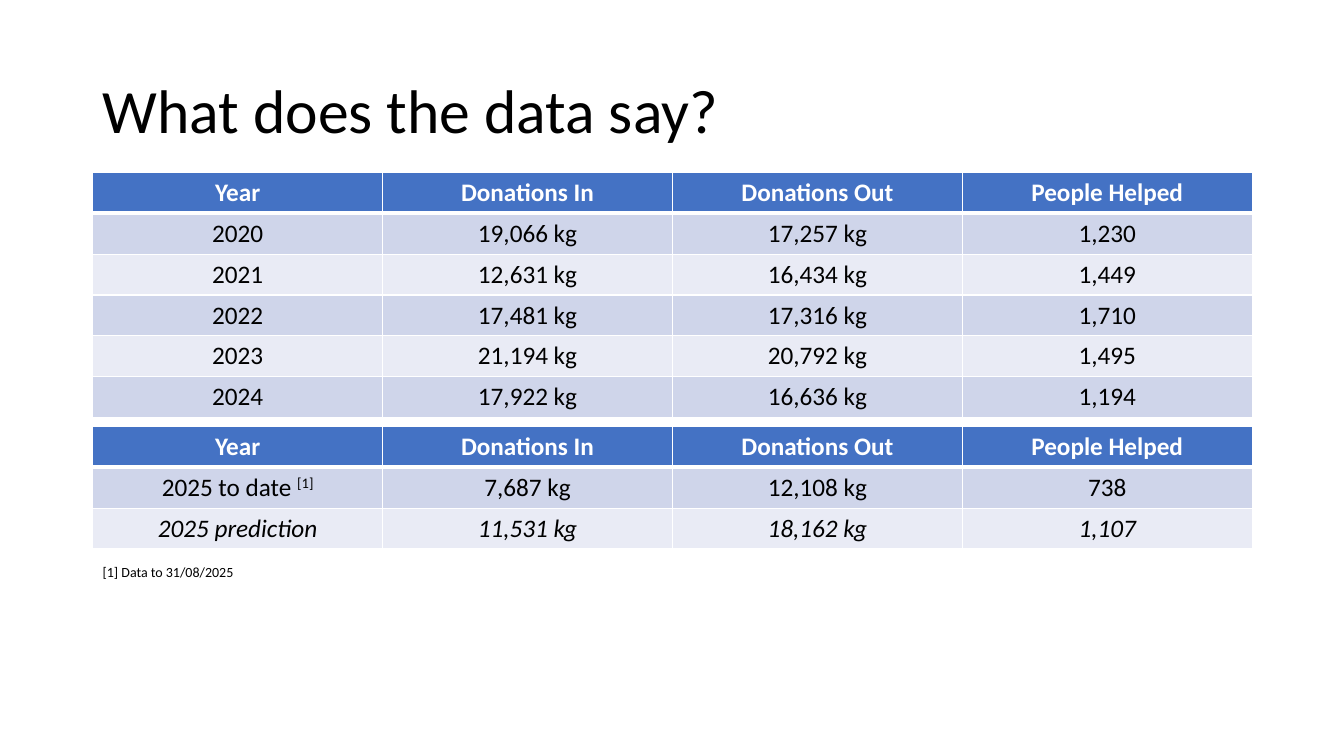
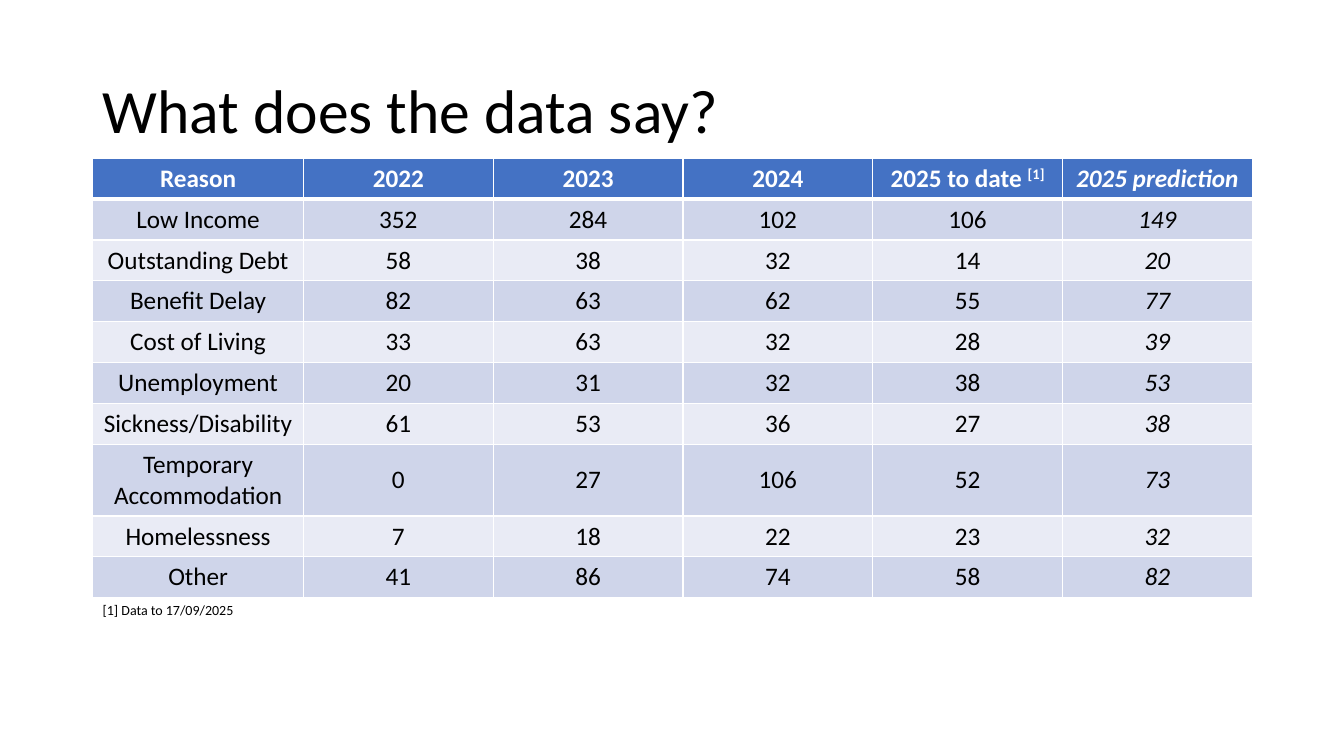
from lxml.etree import SubElement
from pptx import Presentation
from pptx.dml.color import RGBColor
from pptx.enum.text import MSO_ANCHOR as Anchor, MSO_AUTO_SIZE as AutoSize, PP_ALIGN as Align
from pptx.oxml.ns import qn
from pptx.util import Inches, Pt

LEFT, WIDTH = Inches(0.92), Inches(11.5)
ROW_HEIGHT = Inches(4.05) // 10
TITLE = "What does the data say?"
MARKER = "[1]"
PREDICTION = "2025 prediction"
TO_DATE = f"2025 to date {MARKER}"

DONATION_HEADINGS = ("Year", "Donations In", "Donations Out", "People Helped")
PAST_YEARS = [
    DONATION_HEADINGS,
    ("2020", "19,066 kg", "17,257 kg", "1,230"),
    ("2021", "12,631 kg", "16,434 kg", "1,449"),
    ("2022", "17,481 kg", "17,316 kg", "1,710"),
    ("2023", "21,194 kg", "20,792 kg", "1,495"),
    ("2024", "17,922 kg", "16,636 kg", "1,194"),
]
CURRENT_YEAR = [
    DONATION_HEADINGS,
    (TO_DATE, "7,687 kg", "12,108 kg", "738"),
    (PREDICTION, "11,531 kg", "18,162 kg", "1,107"),
]
REASONS = [
    ("Reason", "2022", "2023", "2024", TO_DATE, PREDICTION),
    ("Low Income", "352", "284", "102", "106", "149"),
    ("Outstanding Debt", "58", "38", "32", "14", "20"),
    ("Benefit Delay", "82", "63", "62", "55", "77"),
    ("Cost of Living", "33", "63", "32", "28", "39"),
    ("Unemployment", "20", "31", "32", "38", "53"),
    ("Sickness/Disability", "61", "53", "36", "27", "38"),
    ("Temporary Accommodation", "0", "27", "106", "52", "73"),
    ("Homelessness", "7", "18", "22", "23", "32"),
    ("Other", "41", "86", "74", "58", "82"),
]


def color(value):
    """Turn a hex string into a colour."""
    return RGBColor.from_string(value)


class DataDeck:
    """Hold the shared style and the slide being built."""

    FONT = "Calibri"
    INK, PAPER, HEADER = "000000", "FFFFFF", "4472C4"
    BANDS = ("E9EBF5", "CFD5EA")

    def __init__(self):
        """Start a widescreen deck."""
        self.deck = Presentation()
        self.deck.slide_width, self.deck.slide_height = Inches(13.33), Inches(7.5)
        self.page = None

    def style(self, para, size, ink=INK, bold=False, italic=False):
        """Format every run of a paragraph."""
        for span in para.runs:
            font = span.font
            font.name, font.size = self.FONT, Pt(size)
            font.bold, font.italic = bold, italic
            font.color.rgb = color(ink)

    def add_page(self, title):
        """Add a slide with its title."""
        self.page = self.deck.slides.add_slide(self.deck.slide_layouts[5])
        box = self.page.shapes.title
        box.left, box.top, box.width, box.height = LEFT, Inches(0.4), WIDTH, Inches(1.45)
        frame = box.text_frame
        frame.text = title
        frame.auto_size = AutoSize.NONE
        frame.vertical_anchor = Anchor.MIDDLE
        para = frame.paragraphs[0]
        para.alignment, para.line_spacing = Align.LEFT, 0.9
        self.style(para, 44)

    def add_borders(self, cell, top, bottom):
        """Rule a cell with the given top and bottom weights in points."""
        properties = cell._tc.get_or_add_tcPr()
        for side, weight in (("L", 1), ("R", 1), ("T", top), ("B", bottom)):
            line = SubElement(properties, qn(f"a:ln{side}"), w=str(Pt(weight)))
            fill = SubElement(line, qn("a:solidFill"))
            SubElement(fill, qn("a:srgbClr"), val=self.PAPER)

    def fill_cell(self, cell, text, row, italic):
        """Write and format one table cell."""
        is_header = row == 0
        self.add_borders(cell, 3 if row == 1 else 1, 3 if is_header else 1)
        cell.fill.solid()
        cell.fill.fore_color.rgb = color(self.HEADER if is_header else self.BANDS[row % 2])
        cell.vertical_anchor = Anchor.MIDDLE
        label, marker, _ = text.partition(MARKER)
        para = cell.text_frame.paragraphs[0]
        para.text = label
        para.alignment = Align.CENTER
        if marker:
            span = para.add_run()
            span.text = marker
            span._r.get_or_add_rPr().set("baseline", "30000")
        self.style(para, 18, self.PAPER if is_header else self.INK, is_header, italic)

    def add_table(self, top, rows, first_width=None):
        """Add a banded table with predictions in italics."""
        count = len(rows[0])
        frame = self.page.shapes.add_table(
            len(rows), count, LEFT, Inches(top), WIDTH, ROW_HEIGHT * len(rows))
        table = frame.table
        if first_width:
            table.columns[0].width = Inches(first_width)
            for column in list(table.columns)[1:]:
                column.width = (WIDTH - Inches(first_width)) // (count - 1)
        for row, values in enumerate(rows):
            for column, text in enumerate(values):
                italic = PREDICTION in (values[0], rows[0][column])
                self.fill_cell(table.cell(row, column), text, row, italic)

    def add_footnote(self, top, text):
        """Add the small note under a table."""
        box = self.page.shapes.add_textbox(LEFT, Inches(top), WIDTH, Inches(0.27))
        frame = box.text_frame
        frame.word_wrap = True
        frame.auto_size = AutoSize.SHAPE_TO_FIT_TEXT
        frame.text = f"{MARKER} {text}"
        self.style(frame.paragraphs[0], 10)


def main():
    """Build both slides and save them."""
    data = DataDeck()

    data.add_page(TITLE)
    data.add_table(1.71, PAST_YEARS)
    data.add_table(4.23, CURRENT_YEAR)
    data.add_footnote(5.54, "Data to 31/08/2025")

    data.add_page(TITLE)
    data.add_table(1.57, REASONS, first_width=2.09)
    data.add_footnote(5.92, "Data to 17/09/2025")

    data.deck.save("out.pptx")


if __name__ == "__main__":
    main()
